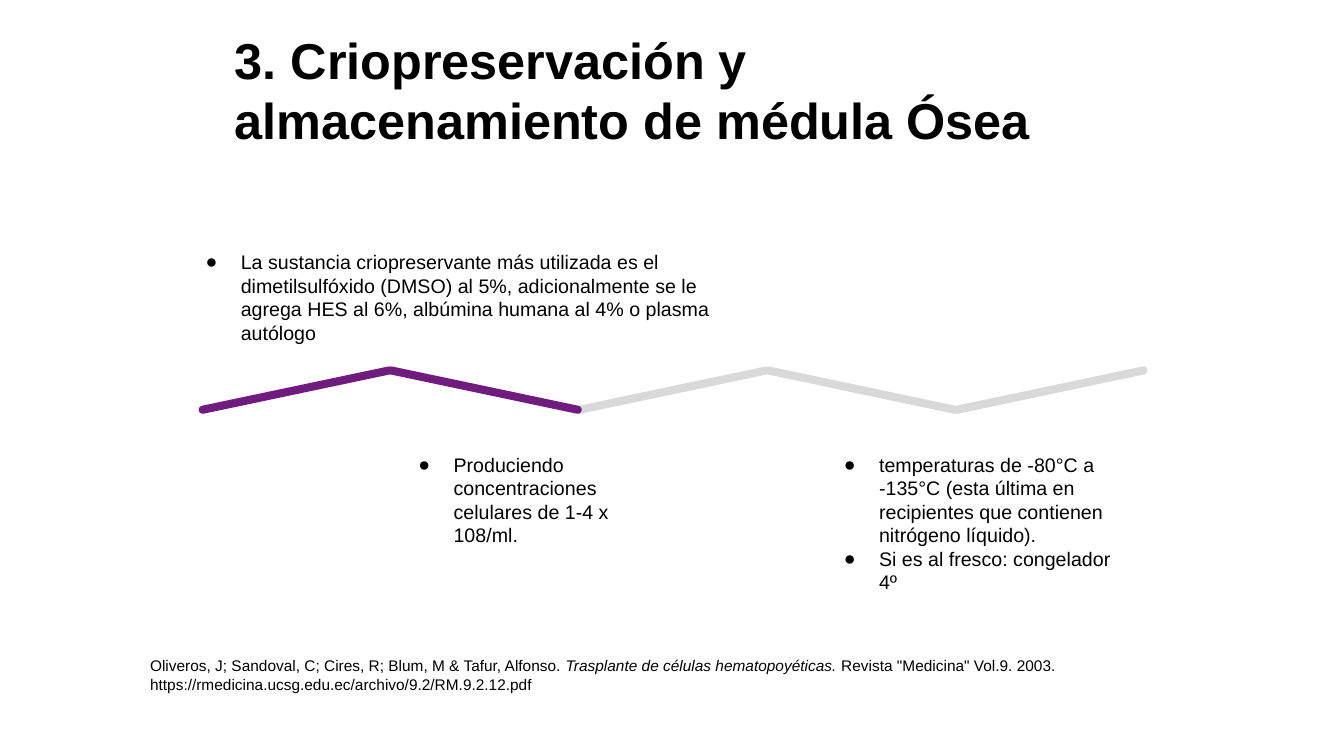
from lxml import etree
from pptx import Presentation
from pptx import util as u
from pptx.dml.color import RGBColor
from pptx.enum import shapes, text
from pptx.oxml import ns

WIDTH, HEIGHT = u.Inches(13.33), u.Inches(7.5)
BLACK, PURPLE, GREY = "000000", "701C7F", "D9D9D9"
FONT = "Arial"

TITLE = "3. Criopreservación y almacenamiento de médula Ósea"
REFERENCE = [
    ("Oliveros, J; Sandoval, C; Cires, R; Blum, M & Tafur, Alfonso.", False),
    (" Trasplante de células hematopoyéticas. ", True),
    ('Revista "Medicina" Vol.9. 2003. '
     "https://rmedicina.ucsg.edu.ec/archivo/9.2/RM.9.2.12.pdf", False),
]
STEPS = [
    ((60.92, 58.53, 22.58, 21.6), [
        "temperaturas de -80°C a -135°C (esta última en recipientes "
        "que contienen nitrógeno líquido).",
        "Si es al fresco: congelador 4º"]),
    ((29.26, 58.53, 21.83, 15.2), [
        "Produciendo concentraciones celulares de 1-4 x 108/ml."]),
    ((13.43, 31.73, 41.71, 18.4), [
        "La sustancia criopreservante más utilizada es el dimetilsulfóxido "
        "(DMSO) al 5%, adicionalmente se le agrega HES al 6%, albúmina "
        "humana al 4% o plasma autólogo"]),
]

ZIGZAG_COLORS = [PURPLE, PURPLE, GREY, GREY, GREY]
ZIGZAG_LEFT, ZIGZAG_PITCH, ZIGZAG_TOP = 14.63, 14.03, 51.07
BAR_WIDTH, BAR_HEIGHT, BAR_TILT = 14.78, 1.07, 11.9


def color(value):
    return RGBColor.from_string(value)


def place(left, top, width, height):
    shares = ((left, WIDTH), (top, HEIGHT), (width, WIDTH), (height, HEIGHT))
    return [round(share * side / 100) for share, side in shares]


def add_box(page, area, anchor=text.MSO_ANCHOR.TOP):
    frame = page.shapes.add_textbox(*place(*area)).text_frame
    frame.word_wrap = True
    frame.vertical_anchor = anchor
    frame.margin_left = frame.margin_right = u.Inches(0.1)
    frame.margin_top = frame.margin_bottom = u.Inches(0.1)
    return frame


def style(span, size, bold=False, italic=False):
    font = span.font
    font.name, font.size = FONT, u.Pt(size)
    font.bold, font.italic = bold, italic
    font.color.rgb = color(BLACK)


def add_bullet(para):
    props = para._p.get_or_add_pPr()
    props.set("marL", str(u.Inches(0.5)))
    props.set("indent", str(u.Inches(-0.35)))
    tint = etree.SubElement(props, ns.qn("a:buClr"))
    etree.SubElement(tint, ns.qn("a:srgbClr"), val=BLACK)
    etree.SubElement(props, ns.qn("a:buFont"), typeface=FONT)
    etree.SubElement(props, ns.qn("a:buChar"), char="●")


def add_title(page):
    frame = add_box(page, (16.73, 2.4, 65.19, 18.8), text.MSO_ANCHOR.MIDDLE)
    frame.text = TITLE
    style(frame.paragraphs[0].runs[0], 36, bold=True)


def add_reference(page):
    para = add_box(page, (10.43, 85.47, 72.54, 7.6)).paragraphs[0]
    for words, italic in REFERENCE:
        span = para.add_run()
        span.text = words
        style(span, 11, italic=italic)


def add_zigzag(page):
    for index, fill in reversed(list(enumerate(ZIGZAG_COLORS))):
        left = ZIGZAG_LEFT + index * ZIGZAG_PITCH
        bar = page.shapes.add_shape(
            shapes.MSO_SHAPE.ROUNDED_RECTANGLE,
            *place(left, ZIGZAG_TOP, BAR_WIDTH, BAR_HEIGHT))
        bar.adjustments[0] = 0.5
        bar.rotation = BAR_TILT if index % 2 else 360 - BAR_TILT
        bar.fill.solid()
        bar.fill.fore_color.rgb = color(fill)
        bar.line.fill.background()
        bar.shadow.inherit = False


def add_step(page, area, items):
    frame = add_box(page, area)
    frame.text = "\n".join(items)
    for para in frame.paragraphs:
        add_bullet(para)
        style(para.runs[0], 14)


def main():
    deck = Presentation()
    deck.slide_width, deck.slide_height = WIDTH, HEIGHT
    page = deck.slides.add_slide(deck.slide_layouts[6])
    add_title(page)
    add_reference(page)
    add_zigzag(page)
    for area, items in STEPS:
        add_step(page, area, items)
    deck.save("out.pptx")


if __name__ == "__main__":
    main()
